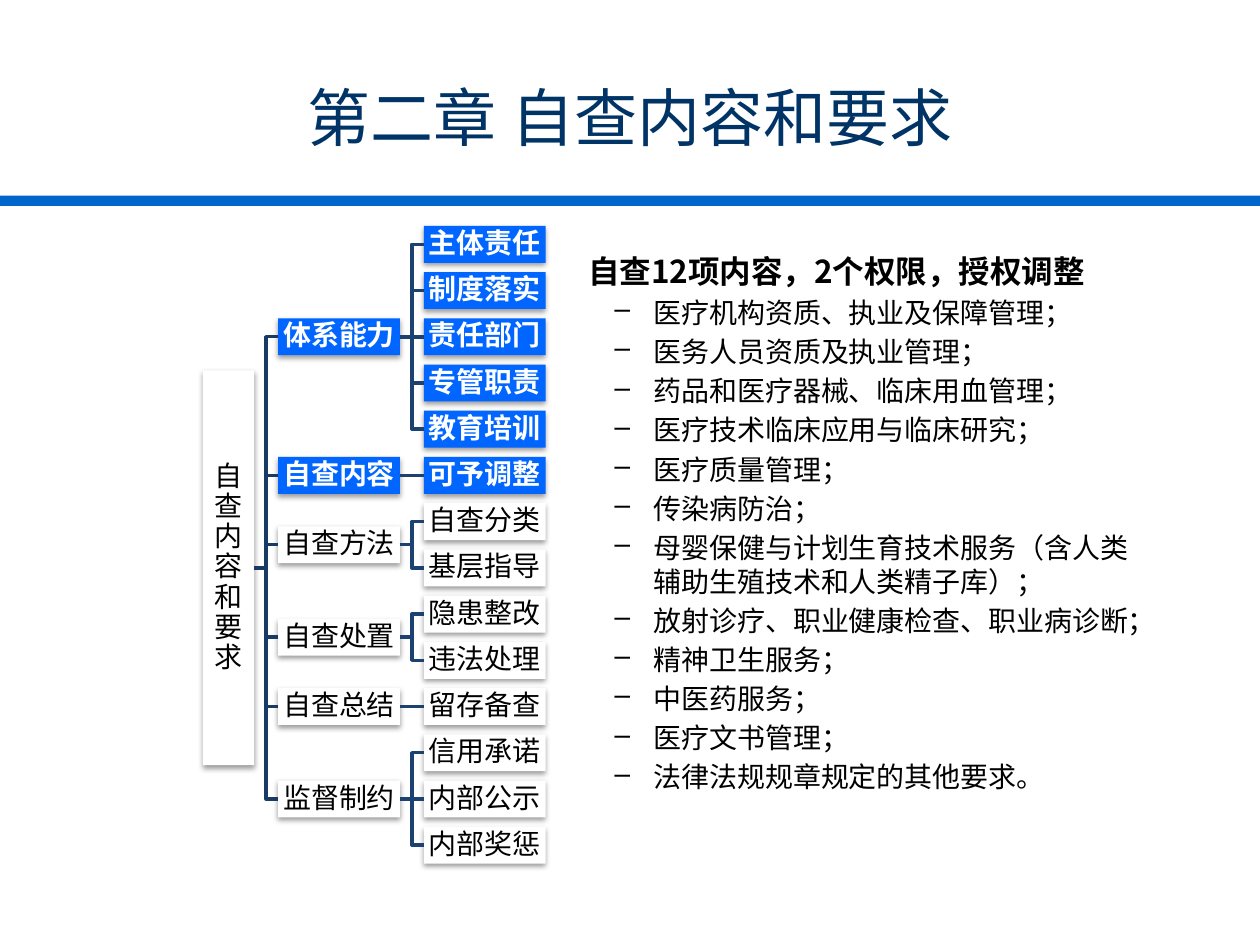
from typing import NamedTuple

from lxml.etree import SubElement
from pptx import Presentation
from pptx.dml.color import RGBColor
from pptx.enum.shapes import MSO_CONNECTOR, MSO_SHAPE
from pptx.enum.text import MSO_ANCHOR, PP_ALIGN
from pptx.oxml import parse_xml
from pptx.oxml.ns import nsdecls, qn
from pptx.util import Inches, Pt

WIDTH, HEIGHT = 10, 7.5
FONT = "Noto Sans CJK SC"
RIGHT_SITE, LEFT_SITE = 3, 1

# Branch, its leaves, and whether it is highlighted
ROOT = "自查内容和要求"
BRANCHES = [
    ("体系能力", ["主体责任", "制度落实", "责任部门", "专管职责", "教育培训"], True),
    ("自查内容", ["可予调整"], True),
    ("自查方法", ["自查分类", "基层指导"], False),
    ("自查处置", ["隐患整改", "违法处理"], False),
    ("自查总结", ["留存备查"], False),
    ("监督制约", ["信用承诺", "内部公示", "内部奖惩"], False),
]
HEADING = "自查12项内容，2个权限，授权调整"
ITEMS = [
    "医疗机构资质、执业及保障管理；",
    "医务人员资质及执业管理；",
    "药品和医疗器械、临床用血管理；",
    "医疗技术临床应用与临床研究；",
    "医疗质量管理；",
    "传染病防治；",
    "母婴保健与计划生育技术服务（含人类辅助生殖技术和人类精子库）；",
    "放射诊疗、职业健康检查、职业病诊断；",
    "精神卫生服务；",
    "中医药服务；",
    "医疗文书管理；",
    "法律法规规章规定的其他要求。",
]


class Box(NamedTuple):
    left: float
    top: float
    width: float
    height: float

    def lengths(self):
        return [Inches(value) for value in self]


def share(left, top, width, height):
    """A box given as shares of the slide's size."""
    return Box(left * WIDTH, top * HEIGHT, width * WIDTH, height * HEIGHT)


def color(value):
    return RGBColor.from_string(value)


def write(para, text, size, ink, bold=False):
    para.text = text
    para.font.size, para.font.bold = Pt(size), bold
    para.font.name = FONT
    para.font.color.rgb = color(ink)
    # East Asian characters need their own typeface entry
    SubElement(para.font._element, qn("a:ea"), typeface=FONT)


def add_rect(page, box, fill):
    rect = page.shapes.add_shape(MSO_SHAPE.RECTANGLE, *box.lengths())
    rect.shadow.inherit = False
    rect.fill.solid()
    rect.fill.fore_color.rgb = color(fill)
    rect.line.fill.background()
    return rect


def add_title(page, box, text):
    frame = page.shapes.add_textbox(*box.lengths()).text_frame
    frame.word_wrap = True
    frame.vertical_anchor = MSO_ANCHOR.MIDDLE
    para = frame.paragraphs[0]
    para.alignment = PP_ALIGN.CENTER
    write(para, text, 36, "003366")


def add_node(page, box, text, highlighted=False):
    node = add_rect(page, box, "0066FF" if highlighted else "FFFFFF")
    effects = node._element.spPr.find(qn("a:effectLst"))
    effects.append(parse_xml(
        f'<a:outerShdw {nsdecls("a")} blurRad="{Pt(3.1)}" dist="{Pt(1.6)}" '
        'dir="5400000" rotWithShape="0"><a:srgbClr val="000000">'
        '<a:alpha val="38000"/></a:srgbClr></a:outerShdw>'))
    frame = node.text_frame
    frame.word_wrap = True
    frame.vertical_anchor = MSO_ANCHOR.MIDDLE
    frame.margin_left = frame.margin_right = Inches(0.01)
    frame.margin_top = frame.margin_bottom = Inches(0.01)
    para = frame.paragraphs[0]
    para.alignment = PP_ALIGN.CENTER
    para.line_spacing = 0.9
    write(para, text, 16, "FFFFFF" if highlighted else "000000", highlighted)
    return node


def link(page, parent, child, ink, level):
    """Join two nodes, with a straight line where they stand level."""
    kind = MSO_CONNECTOR.STRAIGHT if level else MSO_CONNECTOR.ELBOW
    line = page.shapes.add_connector(kind, 0, 0, 0, 0)
    line.begin_connect(parent, RIGHT_SITE)
    line.end_connect(child, LEFT_SITE)
    line.line.color.rgb = color(ink)
    line.line.width = Pt(2)
    SubElement(line._element.spPr, qn("a:effectLst"))


def add_tree(page, box):
    # Nodes fill 0.8 of a row; the last row has no gap below it
    leaf_count = sum(len(leaves) for _, leaves, _ in BRANCHES)
    row = box.height / (leaf_count - 0.2)
    root_width, node_width, gap = (box.width * part for part in (0.15, 0.355, 0.07))
    branch_left = box.left + root_width + gap
    leaf_left = branch_left + node_width + gap

    def node_box(left, position):
        return Box(left, box.top + position * row, node_width, 0.8 * row)

    # Branches stand at the middle of their leaves, the root at the middle of the branches
    middles, first = [], 0
    for _, leaves, _ in BRANCHES:
        middles.append(first + (len(leaves) - 1) / 2)
        first += len(leaves)
    root_height = 8.54 * row
    root_middle = box.top + ((middles[0] + middles[-1]) / 2 + 0.4) * row
    root = add_node(page, Box(box.left, root_middle - root_height / 2,
                              root_width, root_height), ROOT)

    position = 0
    for (name, leaves, highlighted), middle in zip(BRANCHES, middles):
        branch = add_node(page, node_box(branch_left, middle), name, highlighted)
        link(page, root, branch, "193A64", False)
        for leaf_name in leaves:
            leaf = add_node(page, node_box(leaf_left, position), leaf_name, highlighted)
            link(page, branch, leaf, "1C4271", position == middle)
            position += 1


def add_list(page, box):
    frame = page.shapes.add_textbox(*box.lengths()).text_frame
    frame.word_wrap = True
    heading = frame.paragraphs[0]
    heading.space_before = Pt(3.6)
    heading._p.get_or_add_pPr().set("marL", str(Inches(0.29)))
    write(heading, HEADING, 18, "000000", True)
    for item in ITEMS:
        para = frame.add_paragraph()
        para.level = 1
        para.space_before = Pt(3.2)
        write(para, item, 16, "000000")
        # Hanging dash
        props = para._p.get_or_add_pPr()
        props.set("marL", str(Inches(0.81)))
        props.set("indent", str(Inches(-0.31)))
        bullet = parse_xml(f'<a:buChar {nsdecls("a")} char="–"/>')
        props.find(qn("a:defRPr")).addprevious(bullet)


def main():
    deck = Presentation()
    deck.slide_width, deck.slide_height = Inches(WIDTH), Inches(HEIGHT)
    page = deck.slides.add_slide(deck.slide_layouts[6])
    add_title(page, share(0.05, 0.076, 0.9, 0.095), "第二章 自查内容和要求")
    add_rect(page, share(0, 0.207, 1, 0.011), "0066CC")
    add_list(page, share(0.428, 0.26, 0.489, 0.66))
    add_tree(page, share(0.161, 0.239, 0.272, 0.675))
    deck.save("out.pptx")


if __name__ == "__main__":
    main()
